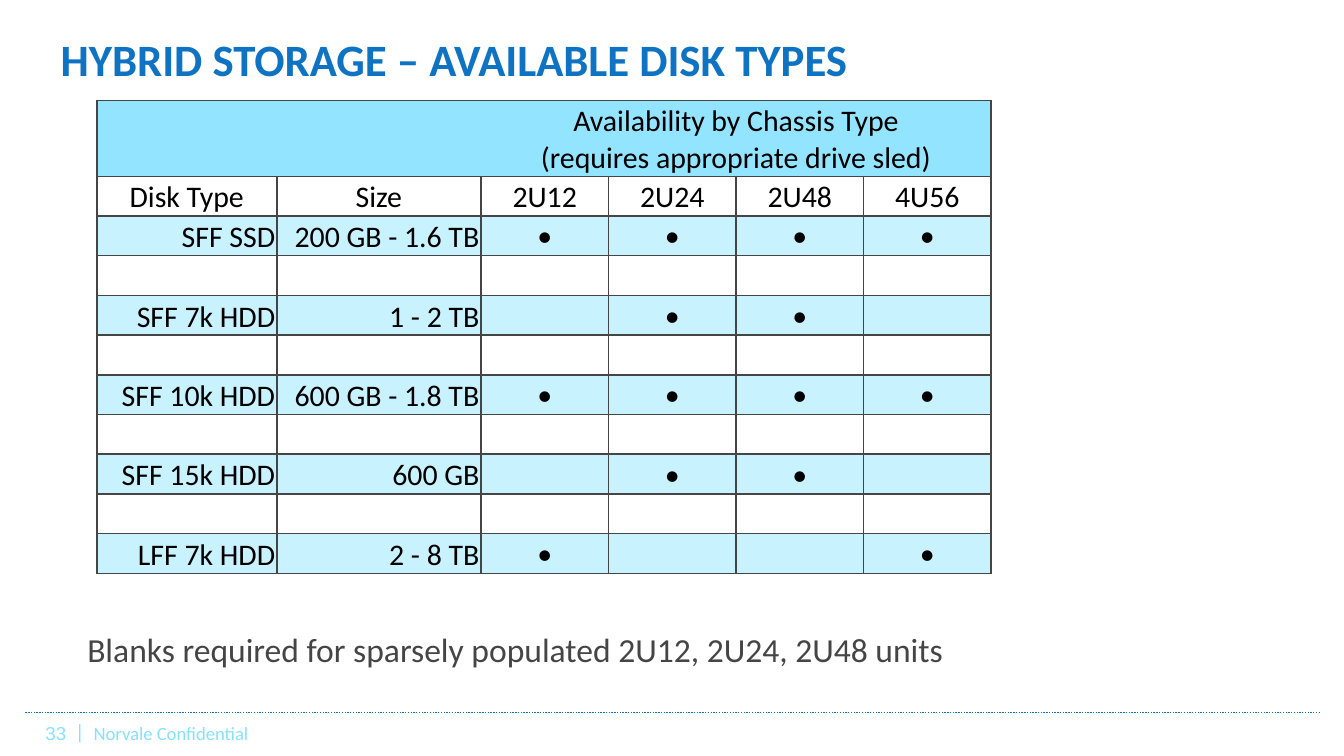
import lxml.etree
import pptx
import pptx.dml.color
import pptx.enum.dml
import pptx.enum.shapes
import pptx.enum.text
import pptx.oxml.ns
import pptx.util

Cm = pptx.util.Cm
Pt = pptx.util.Pt
ALIGN = pptx.enum.text.PP_ALIGN
ANCHOR = pptx.enum.text.MSO_ANCHOR
qn = pptx.oxml.ns.qn


def color(hex_code):
    return pptx.dml.color.RGBColor.from_string(hex_code)


def write(frame, text, size=16, font="Calibri", ink="000000", bold=False,
          align=ALIGN.LEFT, spacing=None):
    frame.text = text
    for paragraph in frame.paragraphs:
        paragraph.alignment = align
        paragraph.line_spacing = spacing
        paragraph.font.size = Pt(size)
        paragraph.font.name = font
        paragraph.font.bold = bold
        paragraph.font.color.rgb = color(ink)


deck = pptx.Presentation()
deck.slide_width = Cm(25.4)
deck.slide_height = Cm(14.28)
slide = deck.slides.add_slide(deck.slide_layouts[5])
slide.background.fill.solid()
slide.background.fill.fore_color.rgb = color("FFFFFF")

footer_rule = slide.shapes.add_connector(
    pptx.enum.shapes.MSO_CONNECTOR.STRAIGHT, Cm(0.48), Cm(13.46), Cm(24.92), Cm(13.46))
footer_rule.line.color.rgb = color("0F73C3")
footer_rule.line.width = Pt(0.75)
footer_rule.line.dash_style = pptx.enum.dml.MSO_LINE.ROUND_DOT
lxml.etree.SubElement(footer_rule._element.spPr, qn("a:effectLst"))

captions = [
    ("33", 0.61, 13.51, 1.3, 0.51, {"size": 10, "font": "Arial", "ink": "85E2FF"}),
    ("Norvale Confidential", 1.52, 13.51, 12.7, 0.89, {"size": 10, "ink": "85E2FF"}),
    ("|", 1.19, 13.46, 0.48, 0.51, {"size": 11, "ink": "85E2FF"}),
    ("Blanks required for sparsely populated 2U12, 2U24, 2U48 units",
     1.4, 11.76, 16.89, 1.02, {"size": 18, "ink": "454545"}),
]
for text, left, top, width, height, style in captions:
    caption = slide.shapes.add_textbox(Cm(left), Cm(top), Cm(width), Cm(height))
    caption.text_frame.word_wrap = width == 12.7
    write(caption.text_frame, text, **style)

title = slide.shapes.title
title.left, title.top, title.width, title.height = Cm(0.89), Cm(0.53), Cm(23.04), Cm(1.32)
title.text_frame.vertical_anchor = ANCHOR.MIDDLE
write(title.text_frame, "HYBRID STORAGE – AVAILABLE DISK TYPES",
      size=24, ink="0F73C3", bold=True, spacing=Pt(24))

chassis_types = ["2U12", "2U24", "2U48", "4U56"]
disks = [
    ("SFF SSD", "200 GB - 1.6 TB", chassis_types),
    ("SFF 7k HDD", "1 - 2 TB", ["2U24", "2U48"]),
    ("SFF 10k HDD", "600 GB - 1.8 TB", chassis_types),
    ("SFF 15k HDD", "600 GB", ["2U24", "2U48"]),
    ("LFF 7k HDD", "2 - 8 TB", ["2U12", "4U56"]),
]
heading = "Availability by Chassis Type\n(requires appropriate drive sled)"
rows = [["", "", heading, "", "", ""], ["Disk Type", "Size"] + chassis_types]
for disk, size, fits in disks:
    rows.append([disk, size] + ["•" if chassis in fits else "" for chassis in chassis_types])
    rows.append([""] * 6)
rows.pop()

availability = slide.shapes.add_table(
    len(rows), 6, Cm(1.83), Cm(1.9), Cm(16.9), Cm(8.93)).table
availability.first_row = False
availability.horz_banding = False
for column, width in zip(availability.columns, [3.4, 3.86] + [2.41] * 4):
    column.width = Cm(width)
for r, row in enumerate(rows):
    availability.rows[r].height = Cm(0.75 if r else 1.43)
    for c, text in enumerate(row):
        cell = availability.cell(r, c)
        cell.margin_left = cell.margin_right = cell.margin_top = Cm(0.03)
        cell.margin_bottom = 0
        cell.vertical_anchor = ANCHOR.MIDDLE if text == "•" else ANCHOR.BOTTOM
        write(cell.text_frame, text,
              align=ALIGN.RIGHT if r > 1 and c < 2 else ALIGN.CENTER)
        hidden_sides = {0: "R", 1: "LR", 2: "L"}.get(c, "") if r == 0 else ""
        for side in "LRTB":
            border = lxml.etree.SubElement(
                cell._tc.get_or_add_tcPr(), qn("a:ln" + side), w=str(Pt(1)))
            if side in hidden_sides:
                lxml.etree.SubElement(border, qn("a:noFill"))
            else:
                ink = lxml.etree.SubElement(border, qn("a:solidFill"))
                lxml.etree.SubElement(ink, qn("a:srgbClr"), val="454545")
        if r % 2:
            cell.fill.background()
        else:
            cell.fill.solid()
            cell.fill.fore_color.rgb = color("C9F2FF" if r else "93E5FF")
availability.cell(0, 2).merge(availability.cell(0, 5))

deck.save("out.pptx")
